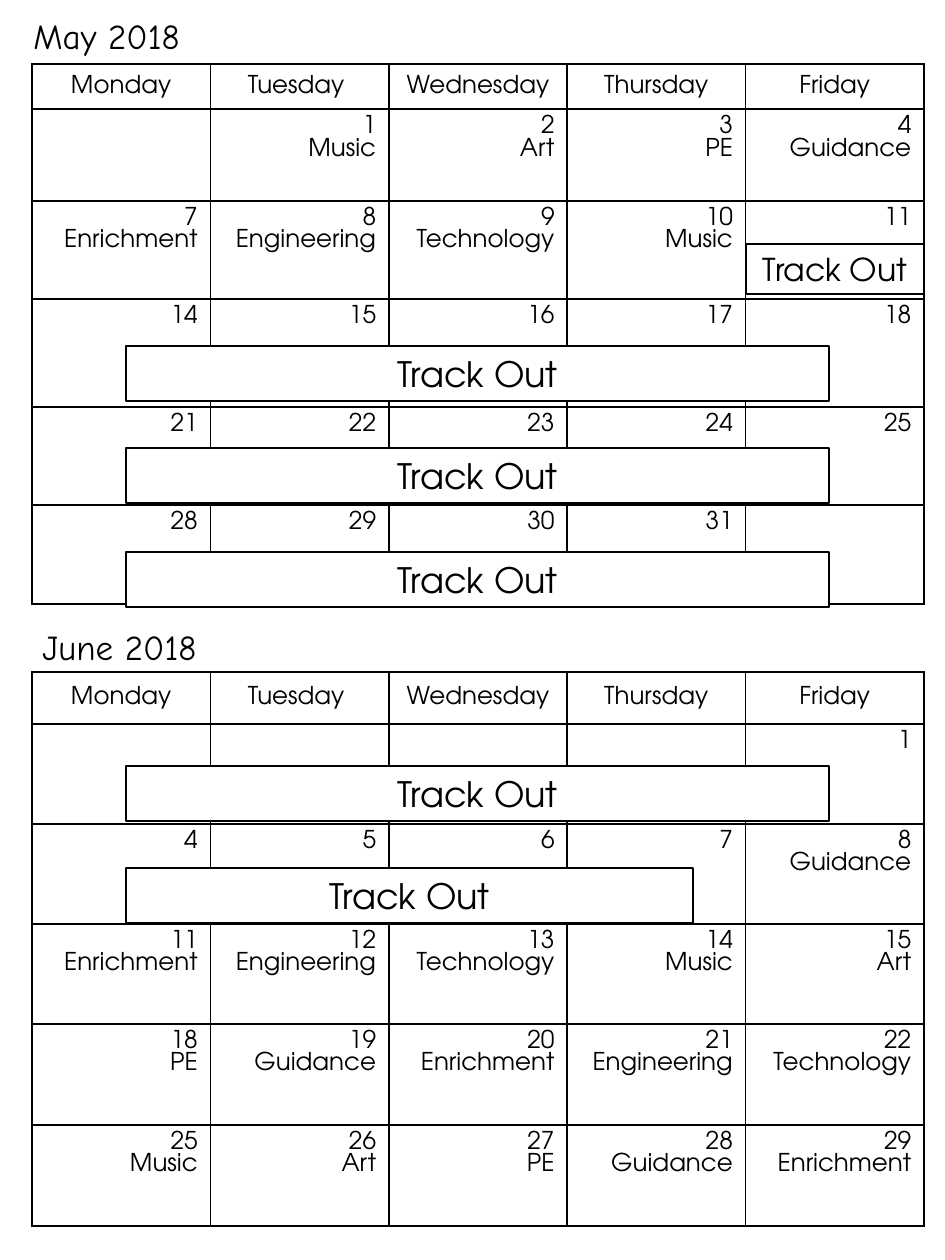
from lxml import etree
from pptx import Presentation
from pptx.dml.color import RGBColor
from pptx.enum.shapes import MSO_SHAPE
from pptx.enum.text import MSO_ANCHOR, PP_ALIGN
from pptx.oxml.ns import qn
from pptx.util import Emu, Pt

LEFT, CENTER, RIGHT = PP_ALIGN.LEFT, PP_ALIGN.CENTER, PP_ALIGN.RIGHT
TOP, MIDDLE = MSO_ANCHOR.TOP, MSO_ANCHOR.MIDDLE
RECTANGLE = MSO_SHAPE.RECTANGLE

EMU_PER_PX = 914400 / 126
BODY_FONT, TITLE_FONT = "TeX Gyre Adventor", "Comic Neue"
BLACK, WHITE = "000000", "FFFFFF"

WEEKDAYS = ["Monday", "Tuesday ", "Wednesday", "Thursday", "Friday"]
ROTATION = ["Music", "Art", "PE", "Guidance", "Enrichment", "Engineering", "Technology"]
TABLE_LEFT, TABLE_WIDTH = 32, 892

# first_monday is counted from the first of the month (0 = the day before);
# classes run on school days from class_start to class_end.
MONTHS = [
    {"title": "May 2018", "title_at": (21, 8), "top": 64,
     "rows": [45, 92, 98, 108, 98, 99], "first_monday": 0, "last_day": 31,
     "class_start": 1, "class_end": 10, "first_class": "Music"},
    {"title": "June 2018", "title_at": (30, 619), "top": 672,
     "rows": [52, 100, 100, 100, 101, 101], "first_monday": -3, "last_day": 30,
     "class_start": 8, "class_end": 29, "first_class": "Guidance"},
]

# Left, top, width, height and text size
BANNERS = [
    (126, 346, 703, 55, 20),
    (126, 448, 703, 55, 20),
    (126, 552, 703, 55, 20),
    (126, 766, 703, 55, 20),
    (746, 244, 178, 50, 18),
    (126, 868, 567, 55, 20),
]


def px(length):
    return Emu(round(length * EMU_PER_PX))


def color(value):
    return RGBColor.from_string(value)


def write(frame, lines, size, font=BODY_FONT, **paragraph_format):
    for index, line in enumerate(lines):
        paragraph = frame.paragraphs[0] if index == 0 else frame.add_paragraph()
        for name, value in paragraph_format.items():
            setattr(paragraph, name, value)
        run = paragraph.add_run()
        run.text = line
        for name, value in {"name": font, "size": Pt(size)}.items():
            setattr(run.font, name, value)
        run.font.color.rgb = color(BLACK)


def add_borders(cell):
    properties = cell._tc.get_or_add_tcPr()
    for index, side in enumerate(("lnL", "lnR", "lnT", "lnB")):
        border = etree.Element(qn(f"a:{side}"), w=str(Pt(1)))
        fill = etree.SubElement(border, qn("a:solidFill"))
        etree.SubElement(fill, qn("a:srgbClr"), val=BLACK)
        properties.insert(index, border)


def month_cells(month):
    """Return one list of text lines for each day cell, week by week."""
    class_number = ROTATION.index(month["first_class"])
    weeks = []
    for week in range(len(month["rows"]) - 1):
        cells = []
        for weekday in range(len(WEEKDAYS)):
            day = month["first_monday"] + 7 * week + weekday
            lines = [str(day)] if 1 <= day <= month["last_day"] else []
            if month["class_start"] <= day <= month["class_end"]:
                lines.append(ROTATION[class_number % len(ROTATION)])
                class_number += 1
            cells.append(lines)
        weeks.append(cells)
    return weeks


def add_calendar(slide, month):
    rows = month["rows"]
    table = slide.shapes.add_table(
        len(rows), len(WEEKDAYS), px(TABLE_LEFT), px(month["top"]),
        px(TABLE_WIDTH), px(sum(rows))).table
    table.first_row = table.horz_banding = False
    for column in table.columns:
        column.width = Emu(px(TABLE_WIDTH) // len(WEEKDAYS))
    for row, height in zip(table.rows, rows):
        row.height = px(height)

    content = [[[name] for name in WEEKDAYS]] + month_cells(month)
    for row_index, row_content in enumerate(content):
        header = row_index == 0
        for column_index, lines in enumerate(row_content):
            cell = table.cell(row_index, column_index)
            cell.fill.background()
            add_borders(cell)
            cell.vertical_anchor = MIDDLE if header else TOP
            write(cell.text_frame, lines, 14, alignment=CENTER if header else RIGHT)


def add_title(slide, month):
    left, top = month["title_at"]
    box = slide.shapes.add_textbox(px(left), px(top), px(314), px(55))
    box.text_frame.word_wrap = True
    write(box.text_frame, [month["title"]], 20, TITLE_FONT, alignment=LEFT)


def add_banner(slide, left, top, width, height, size):
    shape = slide.shapes.add_shape(RECTANGLE, px(left), px(top), px(width), px(height))
    shape.shadow.inherit = False
    shape.fill.solid()
    shape.fill.fore_color.rgb = color(WHITE)
    shape.line.color.rgb = color(BLACK)
    shape.line.width = Pt(0.75)
    frame = shape.text_frame
    for name, value in {"word_wrap": True, "vertical_anchor": TOP}.items():
        setattr(frame, name, value)
    write(frame, ["Track Out"], size, alignment=CENTER)


def main():
    presentation = Presentation()
    presentation.slide_width, presentation.slide_height = px(945), px(1260)
    slide = presentation.slides.add_slide(presentation.slide_layouts[6])

    # Month calendars with their titles
    for month in MONTHS:
        add_calendar(slide, month)
        add_title(slide, month)

    # Break banners over the calendars
    for banner in BANNERS:
        add_banner(slide, *banner)

    presentation.save("out.pptx")


if __name__ == "__main__":
    main()
